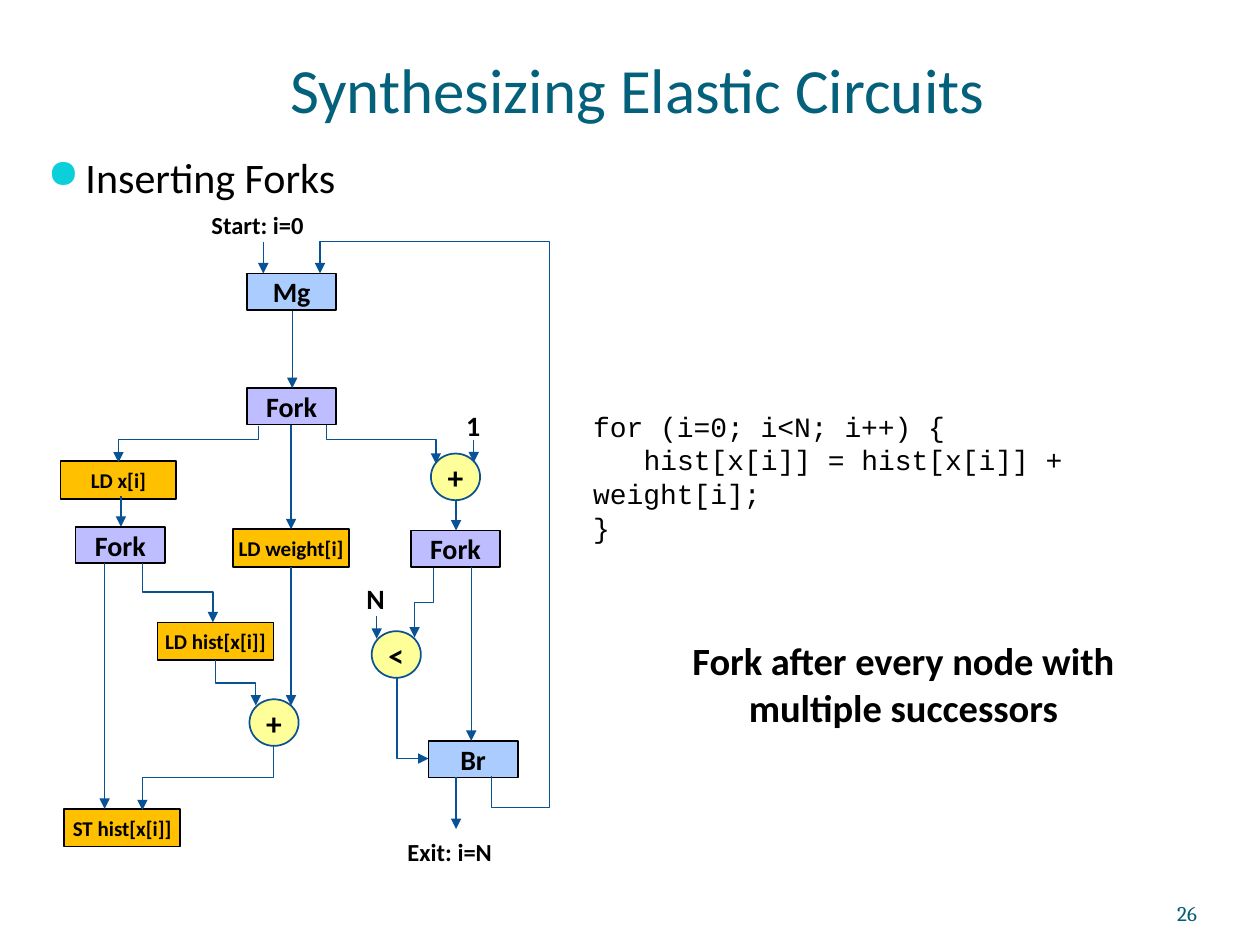
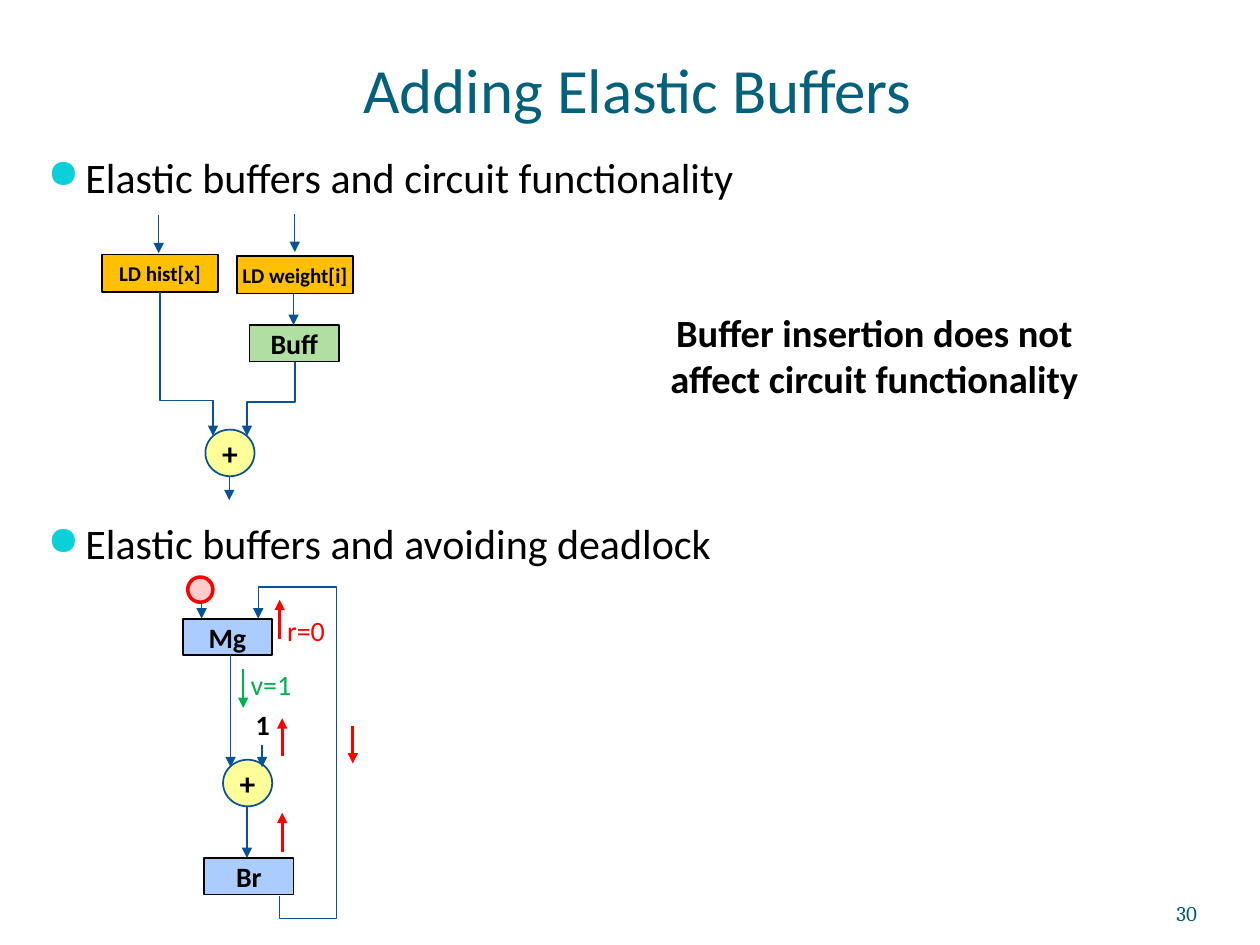
from dataclasses import dataclass

from lxml import etree
from pptx import Presentation
from pptx import util as u
from pptx.dml.color import RGBColor
from pptx.enum import shapes, text
from pptx.oxml.ns import qn

SCALE = 9144
INK = {
    "title": "04617B", "page": "045D75", "text": "000000", "dot": "0BD0D9",
    "wire": "095295", "rim": "0B5292", "red": "FF0000", "green": "00B050",
    "pink": "FFCCCC",
}
LEFT, MID, RIGHT = text.PP_ALIGN.LEFT, text.PP_ALIGN.CENTER, text.PP_ALIGN.RIGHT
TOP, HALF, LOW = (text.MSO_ANCHOR.TOP, text.MSO_ANCHOR.MIDDLE,
                  text.MSO_ANCHOR.BOTTOM)
RECT, OVAL = shapes.MSO_SHAPE.RECTANGLE, shapes.MSO_SHAPE.OVAL


@dataclass(frozen=True)
class Kind:
    form: shapes.MSO_SHAPE
    wide: int
    high: int
    fill: str
    rim: str
    size: int
    line: float = 1


@dataclass(frozen=True)
class Node:
    kind: str
    x: int
    y: int
    word: str = ""


@dataclass(frozen=True)
class Wire:
    x: int
    y: int
    to_x: int
    to_y: int
    via: tuple[int, ...] = ()
    ink: str = "wire"
    thick: float = 0.75


@dataclass(frozen=True)
class Label:
    x: int
    y: int
    wide: int
    high: int
    word: str
    size: int = 16
    ink: str = "text"
    align: text.PP_ALIGN = LEFT
    bold: bool = True
    font: str = "Calibri"
    pad: tuple[int, int, int, int] = (10, 5, 10, 5)
    anchor: text.MSO_ANCHOR = TOP


@dataclass(frozen=True)
class Page:
    title: str
    num: str
    points: list[tuple[int, str]]
    nodes: list[Node]
    wires: list[Wire]
    labels: list[Label]


KINDS = {
    "mem": Kind(RECT, 92, 30, "FFC000", "text", 12),
    "flow": Kind(RECT, 71, 29, "AACCFF", "text", 16),
    "fork": Kind(RECT, 71, 29, "BDBDFF", "text", 16),
    "buff": Kind(RECT, 71, 29, "B0DFA1", "text", 16),
    "op": Kind(OVAL, 39, 37, "FFFF99", "rim", 18),
    "token": Kind(OVAL, 20, 20, INK["pink"], "red", 12, 2),
}


def px(n: float) -> u.Emu:
    return u.Emu(round(n * SCALE))


def color(ink: str) -> RGBColor:
    return RGBColor.from_string(INK[ink])


def write(frame, lab: Label) -> None:
    frame.word_wrap = True
    frame.auto_size = text.MSO_AUTO_SIZE.NONE
    frame.vertical_anchor = lab.anchor
    (frame.margin_left, frame.margin_top,
     frame.margin_right, frame.margin_bottom) = map(px, lab.pad)
    for i, row in enumerate(lab.word.split("\n")):
        para = frame.paragraphs[0] if i == 0 else frame.add_paragraph()
        para.alignment = lab.align
        run = para.add_run()
        run.text = row
        run.font.name = lab.font
        run.font.size = u.Pt(lab.size)
        run.font.bold = lab.bold
        run.font.color.rgb = color(lab.ink)


def put_label(slide, lab: Label):
    box = slide.shapes.add_textbox(*map(px, (lab.x, lab.y, lab.wide, lab.high)))
    write(box.text_frame, lab)
    return box.text_frame


def put_title(slide, word: str) -> None:
    lab = Label(16, -25, 980, 125, word, 36, "title", MID, False,
                pad=(0, 5, 0, 0), anchor=LOW)
    head = slide.shapes.title
    head.left, head.top = px(lab.x), px(lab.y)
    head.width, head.height = px(lab.wide), px(lab.high)
    write(head.text_frame, lab)


def put_point(slide, y: int, word: str) -> None:
    frame = put_label(slide, Label(28, y, 965, 102, word, 24, bold=False))
    prop = frame.paragraphs[0]._p.get_or_add_pPr()
    prop.set("marL", str(px(30)))
    prop.set("indent", str(px(-30)))
    gap = etree.SubElement(prop, qn("a:spcBef"))
    etree.SubElement(gap, qn("a:spcPct"), val="20000")
    tint = etree.SubElement(prop, qn("a:buClr"))
    etree.SubElement(tint, qn("a:srgbClr"), val=INK["dot"])
    etree.SubElement(prop, qn("a:buSzPct"), val="95000")
    etree.SubElement(prop, qn("a:buChar"), char="●")


def put_node(slide, node: Node) -> None:
    kind = KINDS[node.kind]
    area = (node.x, node.y, kind.wide, kind.high)
    shape = slide.shapes.add_shape(kind.form, *map(px, area))
    shape.shadow.inherit = False
    shape.fill.solid()
    shape.fill.fore_color.rgb = RGBColor.from_string(kind.fill)
    shape.line.color.rgb = color(kind.rim)
    shape.line.width = u.Pt(kind.line)
    if node.word:
        write(shape.text_frame, Label(*area, node.word, kind.size, align=MID,
                                      pad=(0, 0, 0, 0), anchor=HALF))


def bend(slide, wire: Wire):
    dx, dy = wire.to_x - wire.x, wire.to_y - wire.y
    mid_x, mid_y = wire.x + dx / 2, wire.y + dy / 2
    half_w, half_h = abs(dy) / 2, abs(dx) / 2
    link = slide.shapes.add_connector(
        shapes.MSO_CONNECTOR.ELBOW, px(mid_x - half_w), px(mid_y - half_h),
        px(mid_x + half_w), px(mid_y + half_h))
    props = link._element.spPr
    left = dx < 0
    form = props.find(qn("a:xfrm"))
    form.set("rot", str((90 if left else 270) * 60000))
    if left == (dy < 0):
        form.set("flipH", "1")
    geom = props.find(qn("a:prstGeom"))
    geom.set("prst", f"bentConnector{2 + len(wire.via)}")
    guides = geom.find(qn("a:avLst"))
    for i, stop in enumerate(wire.via):
        part = (stop - wire.x) / dx if i == 1 else (stop - wire.y) / dy
        etree.SubElement(guides, qn("a:gd"), name=f"adj{i + 1}",
                         fmla=f"val {round(part * 100000)}")
    return link


def put_wire(slide, wire: Wire) -> None:
    if wire.x == wire.to_x:
        ends = map(px, (wire.x, wire.y, wire.to_x, wire.to_y))
        link = slide.shapes.add_connector(shapes.MSO_CONNECTOR.STRAIGHT, *ends)
    else:
        link = bend(slide, wire)
    link.line.color.rgb = color(wire.ink)
    link.line.width = u.Pt(wire.thick)
    props = link._element.spPr
    etree.SubElement(props.find(qn("a:ln")), qn("a:tailEnd"), type="triangle")
    etree.SubElement(props, qn("a:effectLst"))


def put_code(slide) -> None:
    code = ("for (i=0; i<N; i++) {\n"
            "hist[x[i]] = hist[x[i]] + weight[i];\n"
            "}")
    frame = put_label(slide, Label(461, 320, 512, 106, code, bold=False,
                                   font="Courier New"))
    prop = frame.paragraphs[1]._p.get_or_add_pPr()
    prop.set("marL", "0")
    prop.set("indent", str(px(40)))


def end_tag(x: int, y: int, wide: int, word: str) -> Label:
    return Label(x, y, wide, 34, word, 14, align=MID, pad=(0, 5, 0, 5))


def note(x: int, y: int, word: str) -> Label:
    return Label(x, y, 366, 84, word, 22, align=MID)


def flag(x: int, y: int, to_y: int, ink: str = "red") -> Wire:
    return Wire(x, y, x, to_y, ink=ink, thick=1.5)


FORKS = Page(
    "Synthesizing Elastic Circuits", "26",
    [(115, "Inserting Forks")],
    [
        Node("flow", 196, 217, "Mg"),
        Node("fork", 196, 308, "Fork"),
        Node("mem", 48, 366, "LD x[i]"),
        Node("op", 342, 360, "+"),
        Node("fork", 60, 418, "Fork"),
        Node("mem", 185, 420, "LD weight[i]"),
        Node("fork", 326, 421, "Fork"),
        Node("mem", 125, 494, "LD hist[x[i]]"),
        Node("op", 295, 501, "<"),
        Node("op", 198, 555, "+"),
        Node("flow", 340, 588, "Br"),
        Node("mem", 51, 642, "ST hist[x[i]]"),
    ],
    [
        Wire(209, 192, 209, 217),
        Wire(232, 247, 232, 308),
        Wire(231, 337, 231, 420),
        Wire(259, 337, 346, 368, (349,)),
        Wire(205, 338, 94, 367, (349,)),
        Wire(376, 349, 376, 367),
        Wire(362, 397, 362, 421),
        Wire(299, 489, 299, 507),
        Wire(315, 537, 340, 602),
        Wire(362, 617, 362, 658),
        Wire(171, 524, 203, 560, (542,)),
        Wire(231, 450, 231, 560),
        Wire(374, 450, 374, 588),
        Wire(390, 616, 254, 217, (641, 436, 192)),
        Wire(344, 451, 329, 506, (478,)),
        Wire(96, 394, 96, 418),
        Wire(83, 447, 83, 642),
        Wire(113, 447, 169, 494, (470,)),
        Wire(217, 592, 113, 643, (617,)),
    ],
    [
        end_tag(161, 162, 87, "Start: i=0"),
        end_tag(317, 659, 80, "Exit: i=N"),
        Label(360, 319, 31, 37, "1"),
        Label(281, 457, 31, 37, "N"),
        note(534, 501, "Fork after every node with multiple successors"),
    ],
)

BUFFS = Page(
    "Adding Elastic Buffers", "30",
    [(115, "Elastic buffers and circuit functionality"),
     (406, "Elastic buffers and avoiding deadlock")],
    [
        Node("mem", 81, 202, "LD hist[x]"),
        Node("mem", 188, 203, "LD weight[i]"),
        Node("buff", 198, 258, "Buff"),
        Node("op", 163, 341, "+"),
        Node("token", 149, 458),
        Node("flow", 145, 491, "Mg"),
        Node("op", 177, 603, "+"),
        Node("flow", 162, 681, "Br"),
    ],
    [
        Wire(126, 171, 126, 201),
        Wire(234, 170, 234, 200),
        Wire(233, 233, 233, 258),
        Wire(127, 232, 169, 346, (318,)),
        Wire(234, 287, 196, 346, (319,)),
        Wire(182, 378, 182, 397),
        Wire(160, 478, 160, 491),
        Wire(183, 520, 183, 609),
        Wire(208, 591, 208, 609),
        Wire(196, 640, 196, 681),
        Wire(222, 711, 205, 491, (729, 267, 466)),
        flag(193, 531, 562, "green"),
        flag(222, 507, 476),
        flag(224, 676, 645),
        flag(224, 600, 570),
        flag(280, 576, 606),
    ],
    [
        Label(193, 557, 31, 37, "1"),
        Label(218, 482, 52, 37, "r=0", ink="red", bold=False),
        Label(189, 525, 65, 37, "v=1", ink="green", bold=False),
        note(511, 240, "Buffer insertion does not affect circuit functionality"),
    ],
)


def build(deck, page: Page):
    slide = deck.slides.add_slide(deck.slide_layouts[5])
    put_title(slide, page.title)
    for y, word in page.points:
        put_point(slide, y, word)
    for node in page.nodes:
        put_node(slide, node)
    for wire in page.wires:
        put_wire(slide, wire)
    for lab in page.labels:
        put_label(slide, lab)
    put_label(slide, Label(867, 695, 83, 40, page.num, 12, "page", RIGHT, False,
                           "Cambria", (0, 0, 0, 0), LOW))
    return slide


def main() -> None:
    deck = Presentation()
    deck.slide_width, deck.slide_height = px(1000), px(750)
    put_code(build(deck, FORKS))
    build(deck, BUFFS)
    deck.save("out.pptx")


if __name__ == "__main__":
    main()
